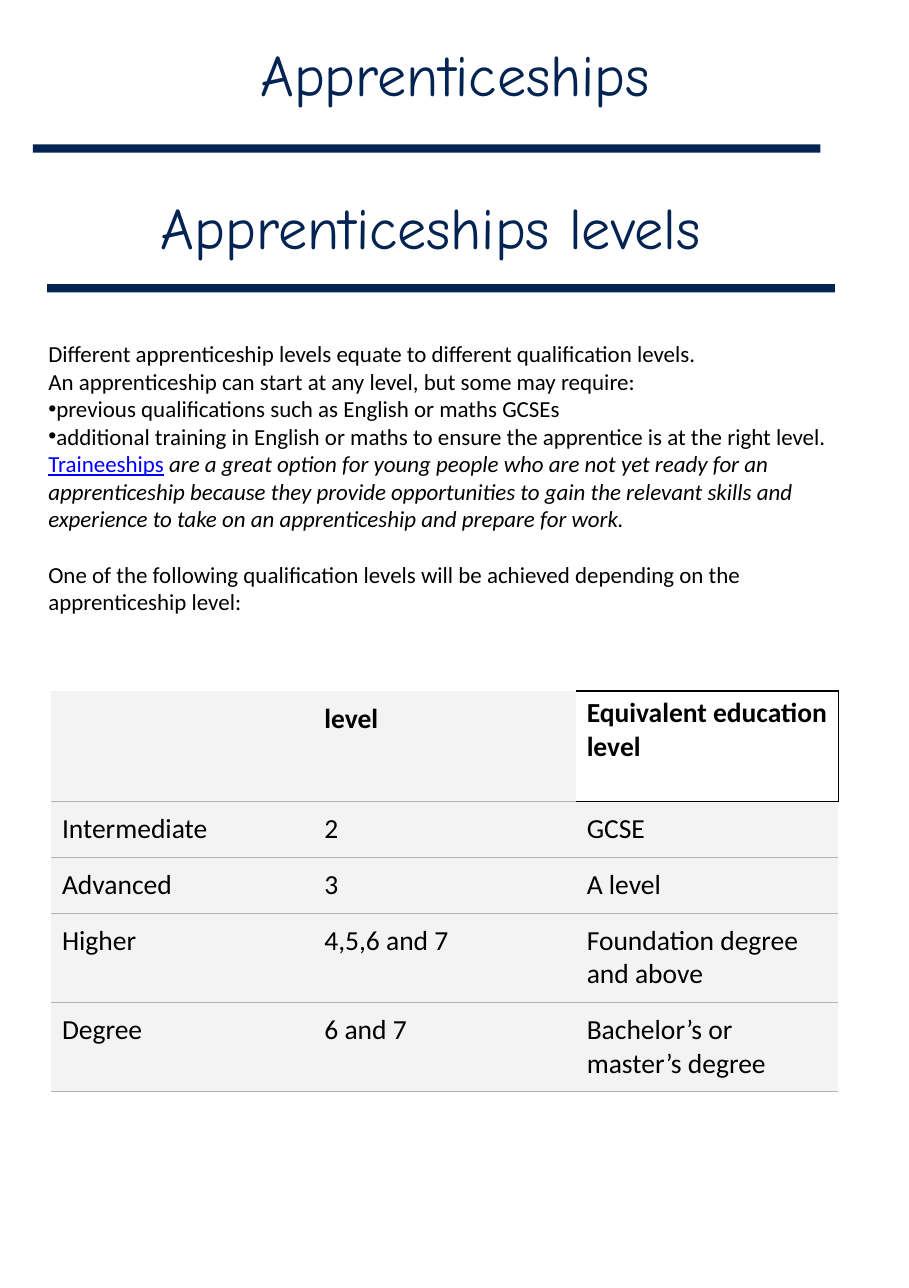
"""Build the page on apprenticeship levels."""
from lxml import etree
from pptx import Presentation, util as u
from pptx.dml.color import RGBColor
from pptx.enum import shapes, text
from pptx.oxml import ns

NAVY = RGBColor(0x03, 0x24, 0x52)
BLACK = RGBColor(0, 0, 0)
BLUE = RGBColor(0, 0, 0xFF)
PALE = RGBColor(0xF3, 0xF3, 0xF3)
GREY = RGBColor(0xB1, 0xB4, 0xB6)
NO_STYLE = "{2D5ABB26-0587-4C30-8999-92F81FD0307C}"

BODY = [
    (False, 0, [("Different apprenticeship levels equate to different qualification levels.", "")]),
    (False, 0, [("An apprenticeship can start at any level, but some may require:", "")]),
    (True, 0, [("previous qualifications such as English or maths GCSEs", "")]),
    (True, 0, [("additional training in English or maths to ensure the apprentice "
                "is at the right level.", "")]),
    (False, 0, [("Traineeships", "link"),
                (" are a great option for young people who are not yet ready for an "
                 "apprenticeship because they provide opportunities to gain the relevant "
                 "skills and experience to take on an apprenticeship and prepare for work.",
                 "italic")]),
    (False, 18.3, [("One of the following qualification levels will be achieved depending "
                    "on the apprenticeship level:", "")]),
]
ROWS = [
    ("", "level", "Equivalent education level"),
    ("Intermediate", "2", "GCSE"),
    ("Advanced", "3", "A level"),
    ("Higher", "4,5,6 and 7", "Foundation degree and above"),
    ("Degree", "6 and 7", "Bachelor’s or master’s degree"),
]
HEIGHTS = (2.54, 1.29, 1.29, 2.06, 2.06)


def place(shape, left, top, width, height):
    """Move and size a shape, in centimetres."""
    shape.left, shape.top = u.Cm(left), u.Cm(top)
    shape.width, shape.height = u.Cm(width), u.Cm(height)


def add_run(para, words, size, color=BLACK, face="Calibri"):
    """Add one run and return its font."""
    run = para.add_run()
    run.text = words
    font = run.font
    font.size, font.name = u.Pt(size), face
    font.color.rgb = color
    return font


def set_frame(frame):
    """Wrap the text and start it at the top."""
    frame.word_wrap = True
    frame.auto_size = text.MSO_AUTO_SIZE.NONE
    frame.vertical_anchor = text.MSO_ANCHOR.TOP


def add_head(shape, words, left, top):
    """Write a centred heading."""
    place(shape, left, top, 19.56, 1.57)
    frame = shape.text_frame
    set_frame(frame)
    frame.margin_left = frame.margin_right = 0
    frame.margin_top = frame.margin_bottom = 0
    para = frame.paragraphs[0]
    para.alignment = text.PP_ALIGN.CENTER
    para.line_spacing = u.Pt(43.7)
    add_run(para, words, 38, NAVY, "Comic Neue")


def add_bar(slide, left, top):
    """Draw a navy bar."""
    bar = slide.shapes.add_shape(shapes.MSO_SHAPE.RECTANGLE,
                                 u.Cm(left), u.Cm(top), u.Cm(18.16), u.Cm(0.19))
    bar.shadow.inherit = False
    bar.fill.solid()
    bar.fill.fore_color.rgb = NAVY
    bar.line.fill.background()


def set_mark(para, dot):
    """Turn the bullet on or off, with no indent."""
    props = para._p.get_or_add_pPr()
    props.set("marL", "0")
    props.set("indent", "0")
    mark = etree.SubElement(props, ns.qn("a:buChar" if dot else "a:buNone"))
    if dot:
        mark.set("char", "•")


def add_body(shape):
    """Write the text on levels."""
    place(shape, 0.86, 7.7, 19.23, 7.95)
    frame = shape.text_frame
    set_frame(frame)
    for num, (dot, gap, runs) in enumerate(BODY):
        para = frame.add_paragraph() if num else frame.paragraphs[0]
        para.alignment = text.PP_ALIGN.LEFT
        para.space_before = u.Pt(gap)
        set_mark(para, dot)
        for words, kind in runs:
            font = add_run(para, words, 15, BLUE if kind == "link" else BLACK)
            font.underline = kind == "link"
            font.italic = kind == "italic"


def add_edge(cell, side, color, width):
    """Draw one side of a cell: R, T or B."""
    line = etree.SubElement(cell._tc.get_or_add_tcPr(), ns.qn("a:ln" + side),
                            w=str(u.Pt(width)))
    fill = etree.SubElement(line, ns.qn("a:solidFill"))
    etree.SubElement(fill, ns.qn("a:srgbClr"), val=str(color))


def fill_cell(cell, words, head, boxed):
    """Set the edges, fill and text of a cell."""
    if boxed:
        for side in "RTB":
            add_edge(cell, side, BLACK, 1)
        cell.fill.background()
    else:
        add_edge(cell, "B", GREY, 0.75)
        cell.fill.solid()
        cell.fill.fore_color.rgb = PALE
    cell.margin_left = cell.margin_right = u.Cm(0.25)
    cell.margin_top = cell.margin_bottom = u.Cm(0.13 if boxed else 0.25)
    if words:
        add_run(cell.text_frame.paragraphs[0], words, 18).bold = head


def add_grid(slide):
    """Add the table of levels."""
    frame = slide.shapes.add_table(len(ROWS), 3, u.Cm(1.18), u.Cm(15.93),
                                   u.Cm(18.15), u.Cm(sum(HEIGHTS)))
    table = frame.table
    table._tbl.tblPr.find(ns.qn("a:tableStyleId")).text = NO_STYLE
    table.horz_banding = False
    for col in table.columns:
        col.width = u.Cm(6.05)
    for y, row in enumerate(ROWS):
        table.rows[y].height = u.Cm(HEIGHTS[y])
        for x, words in enumerate(row):
            fill_cell(table.cell(y, x), words, y == 0, (y, x) == (0, 2))


def main():
    """Build and save the slide."""
    deck = Presentation()
    deck.slide_width, deck.slide_height = u.Cm(20.96), u.Cm(29.69)
    slide = deck.slides.add_slide(deck.slide_layouts[1])
    add_head(slide.shapes.title, "Apprenticeships", 0.71, 0.94)
    add_body(slide.placeholders[1])
    add_grid(slide)
    add_bar(slide, 0.76, 3.33)
    add_head(slide.shapes.add_textbox(0, 0, 0, 0), "Apprenticeships levels", 0.15, 4.47)
    add_bar(slide, 1.09, 6.55)
    deck.save("out.pptx")


if __name__ == "__main__":
    main()
